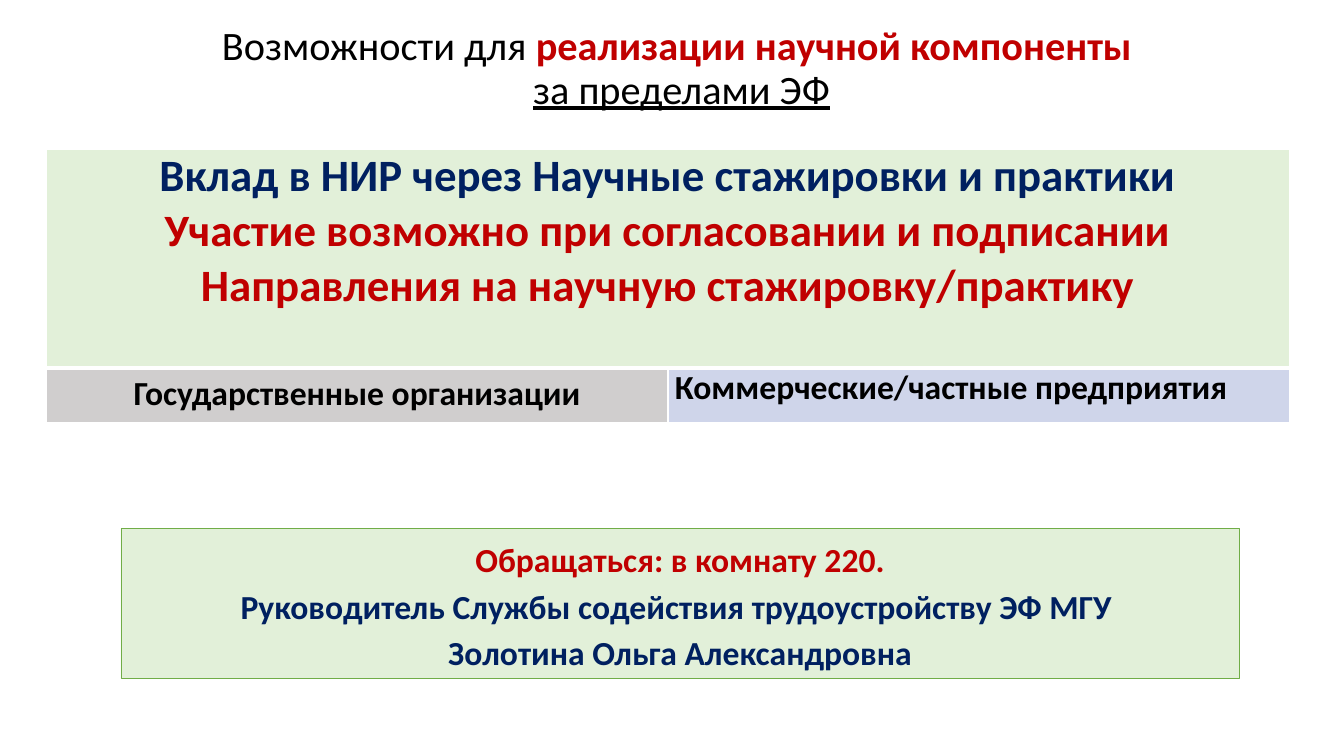
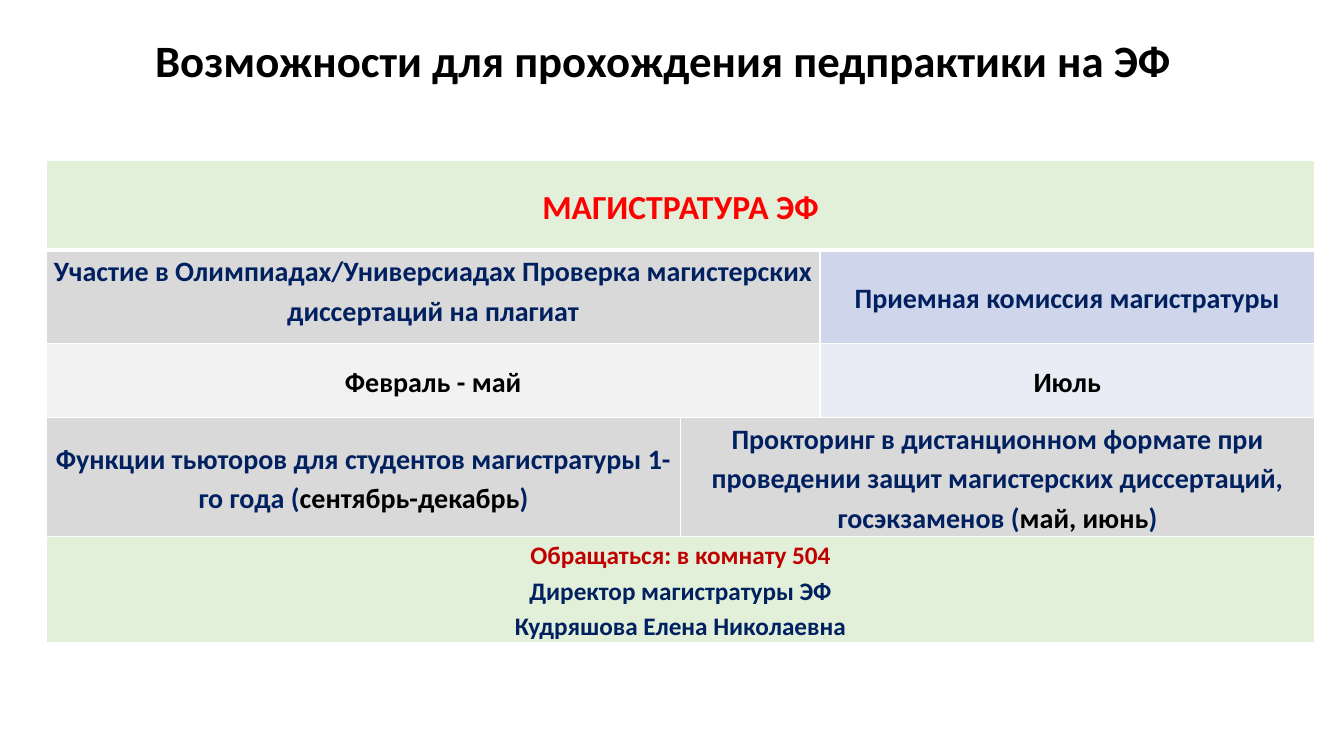
import pptx
import pptx.util
import pptx.dml.color
import pptx.enum.shapes
import pptx.enum.text
import lxml.etree
import pptx.oxml.ns

WIDE, HIGH = pptx.util.Inches(13.33), pptx.util.Inches(7.5)
FONT = "Calibri"
BLACK, WHITE, NAVY, RED, BRIGHT = "000000", "FFFFFF", "002060", "C00000", "FF0000"
MINT, GREEN, GREY, STONE, PALE = "E2F0D9", "70AD47", "D9D9D9", "D0CECE", "F2F2F2"
BLUE, ICE = "CFD5EA", "E9EBF5"
TOP = pptx.enum.text.MSO_ANCHOR.TOP
MID = pptx.enum.text.MSO_ANCHOR.MIDDLE
LEFT = pptx.enum.text.PP_ALIGN.LEFT
CENTER = pptx.enum.text.PP_ALIGN.CENTER


def tint(code):
    return pptx.dml.color.RGBColor.from_string(code)


def area(x, y, wide, high):
    """Turn percentages of the slide into lengths."""
    return [int(part * side / 100)
            for part, side in zip((x, y, wide, high), (WIDE, HIGH) * 2)]


def share(total, parts):
    return [int(total * part / sum(parts)) for part in parts]


def write(frame, paras, size, space=1.0, align=CENTER):
    """Each paragraph lists (text, colour, bold, underline); "\\n" breaks the line."""
    for i, runs in enumerate(paras):
        para = frame.paragraphs[0] if i == 0 else frame.add_paragraph()
        para.alignment, para.line_spacing = align, space
        for text, color, *style in runs:
            if text == "\n":
                para.add_line_break()
                continue
            run = para.add_run()
            run.text = text
            font = run.font
            font.name, font.size = FONT, pptx.util.Pt(size)
            font.color.rgb = tint(color)
            font.bold, font.underline = style or (True, False)


def head(slide, box, runs, size, foot=0.05):
    title = slide.shapes.title
    title.left, title.top, title.width, title.height = area(*box)
    frame = title.text_frame
    frame.auto_size = pptx.enum.text.MSO_AUTO_SIZE.NONE
    frame.word_wrap, frame.vertical_anchor = True, MID
    frame.margin_bottom = pptx.util.Inches(foot)
    write(frame, [runs], size, 0.9)


def edge(cell, row):
    """White borders, with a heavier one under the first row."""
    props = cell._tc.get_or_add_tcPr()
    widths = {"L": 1, "R": 1, "T": 3 if row == 1 else 1, "B": 3 if row == 0 else 1}
    for side, width in widths.items():
        line = lxml.etree.SubElement(props, pptx.oxml.ns.qn("a:ln" + side),
                                     w=str(pptx.util.Pt(width)))
        fill = lxml.etree.SubElement(line, pptx.oxml.ns.qn("a:solidFill"))
        lxml.etree.SubElement(fill, pptx.oxml.ns.qn("a:srgbClr"), val=WHITE)


def grid(slide, box, cols, rows, items):
    """Items are (row, column, span, fill, paragraphs, size, text options)."""
    left, top, wide, high = area(*box)
    table = slide.shapes.add_table(len(rows), len(cols), left, top, wide, high).table
    for col, width in zip(table.columns, share(wide, cols)):
        col.width = width
    for row, height in zip(table.rows, share(high, rows)):
        row.height = height
    for r in range(len(rows)):
        for c in range(len(cols)):
            edge(table.cell(r, c), r)
    for r, c, span, fill, paras, size, look in items:
        cell = table.cell(r, c)
        if span > 1:
            cell.merge(table.cell(r, c + span - 1))
        cell.margin_left = cell.margin_right = pptx.util.Inches(0.07)
        cell.margin_top = cell.margin_bottom = 0
        cell.vertical_anchor = look.get("anchor", MID)
        cell.fill.solid()
        cell.fill.fore_color.rgb = tint(fill)
        write(cell.text_frame, paras, size, look.get("space", 1.15),
              look.get("align", CENTER))


def panel(slide, box, paras, size):
    shape = slide.shapes.add_shape(pptx.enum.shapes.MSO_SHAPE.RECTANGLE, *area(*box))
    shape.shadow.inherit = False
    shape.fill.solid()
    shape.fill.fore_color.rgb = tint(MINT)
    shape.line.color.rgb = tint(GREEN)
    shape.line.width = pptx.util.Pt(0.5)
    frame = shape.text_frame
    frame.word_wrap, frame.vertical_anchor = True, TOP
    write(frame, paras, size, 1.15)


def science(slide):
    head(slide, (3.23, 5.33, 94.97, 14.13), [
        ("Возможности для ", BLACK, False, False),
        ("реализации научной компоненты ", RED),
        ("\n", BLACK),
        ("за пределами ЭФ", BLACK, False, True)], 28.8, foot=0.53)
    grid(slide, (3.45, 19.73, 92.5, 36.13), (1, 1), (4, 1), [
        (0, 0, 2, MINT, [
            [("Вклад в НИР через Научные стажировки и практики", NAVY)],
            [("Участие возможно при согласовании и подписании "
              "Направления на научную стажировку/практику", RED)]],
         32, {"anchor": TOP, "space": 1.0}),
        (1, 0, 1, STONE, [[("Государственные организации", BLACK)]],
         24, {"anchor": TOP}),
        (1, 1, 1, BLUE, [[("Коммерческие/частные предприятия", BLACK)]],
         24, {"anchor": TOP, "space": 1.0, "align": LEFT})])
    panel(slide, (9, 69.87, 83.2, 19.87), [
        [("Обращаться: в комнату 220.", RED)],
        [("Руководитель Службы содействия трудоустройству ЭФ МГУ ", NAVY)],
        [("Золотина Ольга Александровна", NAVY)]], 24)


def teaching(slide):
    head(slide, (1.88, 3.87, 94.97, 8.93),
         [("Возможности для прохождения педпрактики на ЭФ", BLACK)], 32)
    grid(slide, (3.45, 21.2, 94.37, 63.73), (50, 11, 39),
         (0.89, 0.93, 0.73, 1.18, 1.05), [
        (0, 0, 3, MINT, [[("МАГИСТРАТУРА ЭФ", BRIGHT)]], 24, {}),
        (1, 0, 2, GREY, [[("Участие в Олимпиадах/Универсиадах Проверка "
                           "магистерских диссертаций на плагиат", NAVY)]],
         20, {"anchor": TOP}),
        (1, 2, 1, BLUE, [[("Приемная комиссия магистратуры", NAVY)]], 20, {}),
        (2, 0, 2, PALE, [[("Февраль - май", BLACK)]], 20, {}),
        (2, 2, 1, ICE, [[("Июль", BLACK)]], 20, {}),
        (3, 0, 1, GREY, [[
            ("Функции тьюторов для студентов магистратуры 1-го года (", NAVY),
            ("сентябрь-декабрь", BLACK), (")", NAVY)]], 20, {}),
        (3, 1, 2, GREY, [[
            ("Прокторинг в дистанционном формате при проведении защит "
             "магистерских диссертаций, госэкзаменов (", NAVY),
            ("май, июнь", BLACK), (")", NAVY)]], 20, {}),
        (4, 0, 3, MINT, [
            [("Обращаться: в комнату 504", RED)],
            [("Директор магистратуры ЭФ", NAVY)],
            [("Кудряшова Елена Николаевна", NAVY)]], 18, {"anchor": TOP})])


def main():
    deck = pptx.Presentation()
    deck.slide_width, deck.slide_height = WIDE, HIGH
    for build in (science, teaching):
        build(deck.slides.add_slide(deck.slide_layouts[5]))
    deck.save("out.pptx")


if __name__ == "__main__":
    main()
